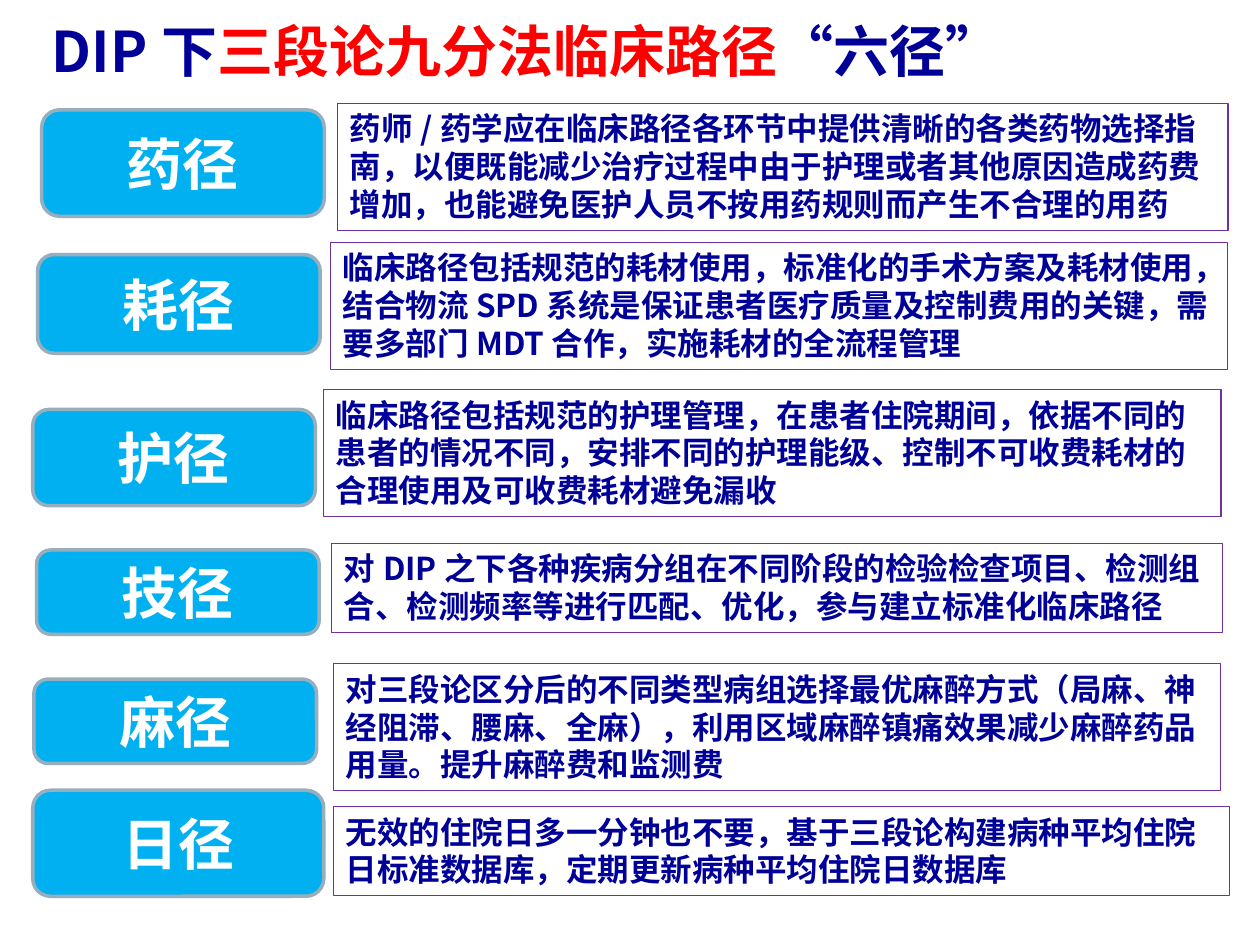
from lxml.etree import SubElement
from pptx import Presentation
from pptx.dml.color import RGBColor
from pptx.enum.shapes import MSO_SHAPE
from pptx.enum.text import MSO_ANCHOR, MSO_AUTO_SIZE, PP_ALIGN
from pptx.oxml.ns import qn
from pptx.util import Pt

FONT = "Noto Sans CJK SC"
NAVY = RGBColor(0x00, 0x00, 0x99)
RED = RGBColor(0xFF, 0x00, 0x00)
WHITE = RGBColor(0xFF, 0xFF, 0xFF)
SKY = RGBColor(0x00, 0xB0, 0xF0)
GREY_BLUE = RGBColor(0x97, 0xAF, 0xBD)
PURPLE = RGBColor(0x70, 0x30, 0xA0)

TITLE_BOX = (22.3, 10.8, 697.7, 45.4)
TITLE_PARTS = [("DIP下", NAVY), ("三段论九分法临床路径", RED), ("“六径”", NAVY)]

THREE_LINES = 72.7
TWO_LINES = 51.1

# label, label box, description, description box (left, top, width, height)
PATHWAYS = [
    ("药径", (23.8, 62.8, 161.5, 60.8),
     "药师/药学应在临床路径各环节中提供清晰的各类药物选择指南，以便既能减少治疗过程中由于护理或者其他原因造成药费增加，也能避免医护人员不按用药规则而产生不合理的用药",
     (192.8, 59, 508.9, THREE_LINES)),
    ("耗径", (21.5, 145.5, 161.5, 56.4),
     "临床路径包括规范的耗材使用，标准化的手术方案及耗材使用，结合物流SPD系统是保证患者医疗质量及控制费用的关键，需要多部门MDT合作，实施耗材的全流程管理",
     (188.8, 138.4, 512.9, THREE_LINES)),
    ("护径", (18.7, 234, 161.5, 55),
     "临床路径包括规范的护理管理，在患者住院期间，依据不同的患者的情况不同，安排不同的护理能级、控制不可收费耗材的合理使用及可收费耗材避免漏收",
     (184.8, 222.5, 512.9, THREE_LINES)),
    ("技径", (20.9, 314.3, 161.5, 48.2),
     "对DIP之下各种疾病分组在不同阶段的检验检查项目、检测组合、检测频率等进行匹配、优化，参与建立标准化临床路径",
     (189.5, 310.4, 509, TWO_LINES)),
    ("麻径", (19.4, 388.1, 161.5, 48.2),
     "对三段论区分后的不同类型病组选择最优麻醉方式（局麻、神经阻滞、腰麻、全麻），利用区域麻醉镇痛效果减少麻醉药品用量。提升麻醉费和监测费",
     (190.6, 379.2, 507, THREE_LINES)),
    ("日径", (18.7, 451.6, 166.3, 60.6),
     "无效的住院日多一分钟也不要，基于三段论构建病种平均住院日标准数据库，定期更新病种平均住院日数据库",
     (190.6, 460.8, 512, TWO_LINES)),
]


def format_paragraph(paragraph, size, color=None, alignment=PP_ALIGN.LEFT):
    paragraph.alignment = alignment
    font = paragraph.font
    font.size = Pt(size)
    font.bold = True
    if color is not None:
        font.color.rgb = color
    font.name = FONT
    # East Asian characters take their font from a:ea
    properties = paragraph._p.pPr.find(qn("a:defRPr"))
    SubElement(properties, qn("a:ea")).set("typeface", FONT)


def place_title(slide, box):
    title = slide.shapes.title
    title.left, title.top, title.width, title.height = map(Pt, box)
    frame = title.text_frame
    frame.vertical_anchor = MSO_ANCHOR.MIDDLE
    paragraph = frame.paragraphs[0]
    paragraph.line_spacing = 0.7
    for text, color in TITLE_PARTS:
        run = paragraph.add_run()
        run.text = text
        run.font.color.rgb = color
    format_paragraph(paragraph, 32)


def add_box(slide, kind, box, text, line_color, line_width):
    shape = slide.shapes.add_shape(kind, *map(Pt, box))
    shape.shadow.inherit = False
    shape.line.color.rgb = line_color
    shape.line.width = Pt(line_width)
    shape.text_frame.word_wrap = True
    shape.text_frame.text = text
    return shape


def add_label(slide, box, text):
    shape = add_box(slide, MSO_SHAPE.ROUNDED_RECTANGLE, box, text, GREY_BLUE, 2)
    shape.fill.solid()
    shape.fill.fore_color.rgb = SKY
    shape.text_frame.vertical_anchor = MSO_ANCHOR.MIDDLE
    format_paragraph(shape.text_frame.paragraphs[0], 32, WHITE, PP_ALIGN.CENTER)


def add_description(slide, box, text):
    shape = add_box(slide, MSO_SHAPE.RECTANGLE, box, text, PURPLE, 0.75)
    shape.fill.background()
    shape.text_frame.vertical_anchor = MSO_ANCHOR.TOP
    shape.text_frame.auto_size = MSO_AUTO_SIZE.SHAPE_TO_FIT_TEXT
    format_paragraph(shape.text_frame.paragraphs[0], 18, NAVY)


def main():
    presentation = Presentation()
    presentation.slide_width = Pt(720)
    presentation.slide_height = Pt(540)
    slide = presentation.slides.add_slide(presentation.slide_layouts[5])
    place_title(slide, TITLE_BOX)
    for label, label_box, description, description_box in PATHWAYS:
        add_label(slide, label_box, label)
        add_description(slide, description_box, description)
    presentation.save("out.pptx")


if __name__ == "__main__":
    main()
